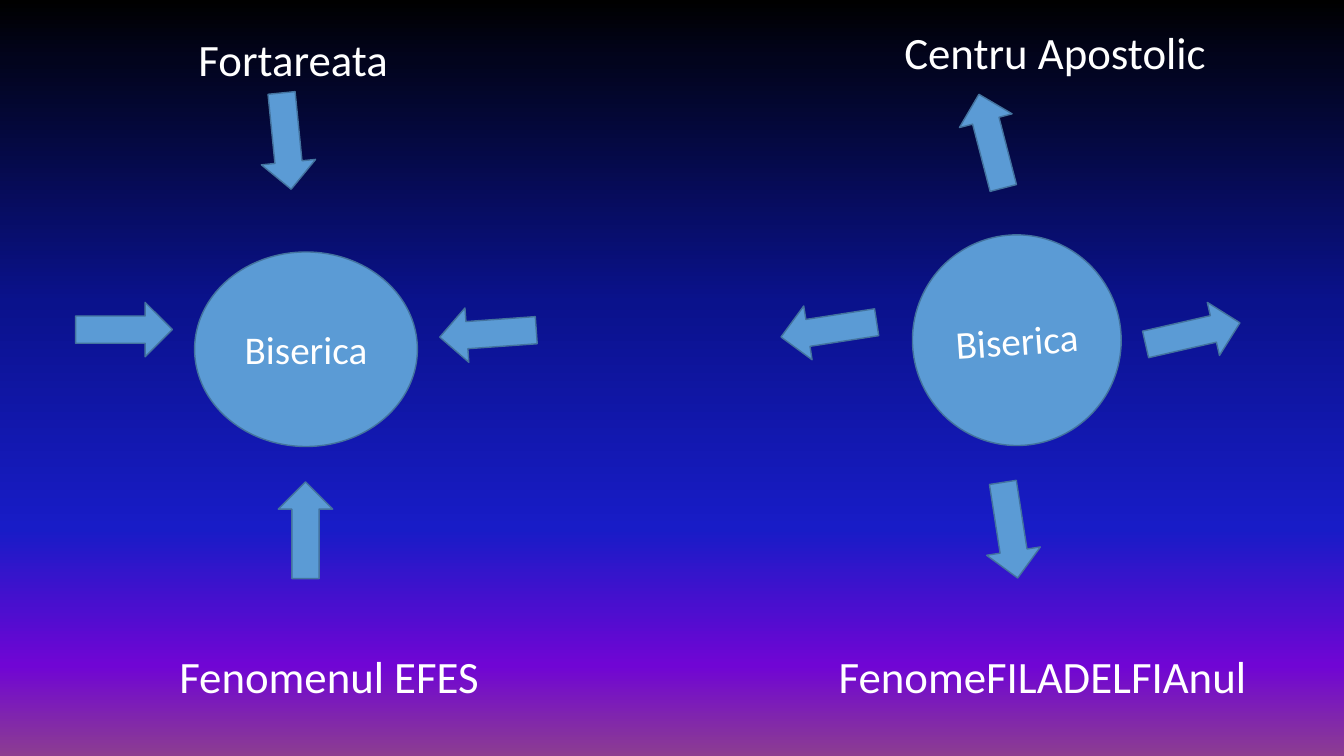
"""Build a slide contrasting arrows into a church with arrows out of it."""
from lxml import etree
from pptx import Presentation
from pptx import util as u
from pptx.dml.color import RGBColor
from pptx.enum import shapes, text
from pptx.oxml import ns

WHITE = RGBColor(0xFF, 0xFF, 0xFF)
BLUE = RGBColor(0x5B, 0x9B, 0xD5)
OUTLINE = RGBColor(0x43, 0x73, 0x9E)
NIGHT_STOPS = [
    (0, RGBColor(0x00, 0x00, 0x00)),
    (8, RGBColor(0x02, 0x04, 0x1D)),
    (40, RGBColor(0x0A, 0x12, 0x8C)),
    (70, RGBColor(0x18, 0x1C, 0xC7)),
    (88, RGBColor(0x70, 0x05, 0xD4)),
    (100, RGBColor(0x8C, 0x3D, 0x91)),
]
ARROW_SPOTS = [(0.75, 3), (2.55, 4.99), (2.36, 1.13), (4.36, 3.04)]
RIGHT_SHIFT = 6.99


class Deck:
    def __init__(self, font="Calibri"):
        self.font = font
        self.prs = Presentation()
        self.prs.slide_width = u.Inches(13.33)
        self.prs.slide_height = u.Inches(7.5)
        self.s = self.prs.slides.add_slide(self.prs.slide_layouts[6])

    def background(self, stops):
        fill = self.s.background.fill
        fill.gradient()
        fill.gradient_angle = 270
        stop_list = next(self.s.element.iter(ns.qn("a:gsLst")))
        for old in list(stop_list):
            stop_list.remove(old)
        for percent, color in stops:
            gs = etree.SubElement(stop_list, ns.qn("a:gs"), pos=str(percent * 1000))
            etree.SubElement(gs, ns.qn("a:srgbClr"), val=str(color))

    def caption(self, shape, words, size):
        p = shape.text_frame.paragraphs[0]
        p.text = words
        p.font.name = self.font
        p.font.size = u.Pt(size)
        p.font.color.rgb = WHITE
        return p

    def shape(self, kind, left, top, width, height, rotation=0):
        sp = self.s.shapes.add_shape(kind, *map(u.Inches, (left, top, width, height)))
        sp.rotation = rotation
        sp.shadow.inherit = False
        sp.fill.solid()
        sp.fill.fore_color.rgb = BLUE
        sp.line.color.rgb = OUTLINE
        sp.line.width = u.Pt(1)
        return sp

    def arrow(self, left, top, rotation):
        self.shape(shapes.MSO_SHAPE.RIGHT_ARROW, left, top, 0.96, 0.54, rotation)

    def church(self, left, top, width, height, rotation=0):
        sp = self.shape(shapes.MSO_SHAPE.OVAL, left, top, width, height, rotation)
        sp.text_frame.vertical_anchor = text.MSO_ANCHOR.MIDDLE
        self.caption(sp, "Biserica", 28).alignment = text.PP_ALIGN.CENTER

    def label(self, words, left, top, width, wrap):
        sp = self.s.shapes.add_textbox(*map(u.Inches, (left, top, width, 0.64)))
        tf = sp.text_frame
        tf.word_wrap = wrap
        tf.auto_size = text.MSO_AUTO_SIZE.SHAPE_TO_FIT_TEXT
        self.caption(sp, words, 32)


def main():
    deck = Deck()
    deck.background(NIGHT_STOPS)

    deck.church(1.93, 2.5, 2.21, 1.93)
    deck.church(9.05, 2.33, 2.07, 2.09, 356.1)
    inward = (0, 270, 84.3, 175.9)
    outward = (171.2, 81.2, 255.4, 347.1)
    for shift, rotations in ((0, inward), (RIGHT_SHIFT, outward)):
        for (left, top), rotation in zip(ARROW_SPOTS, rotations):
            deck.arrow(left + shift, top, rotation)

    deck.label("Fenomenul EFES", 1.68, 6.39, 3.66, True)
    deck.label("FenomeFILADELFIAnul", 8.22, 6.39, 4.5, True)
    deck.label("Fortareata", 1.87, 0.27, 2.1, False)
    deck.label("Centru Apostolic", 8.87, 0.2, 3.22, False)

    deck.prs.save("out.pptx")


if __name__ == "__main__":
    main()
